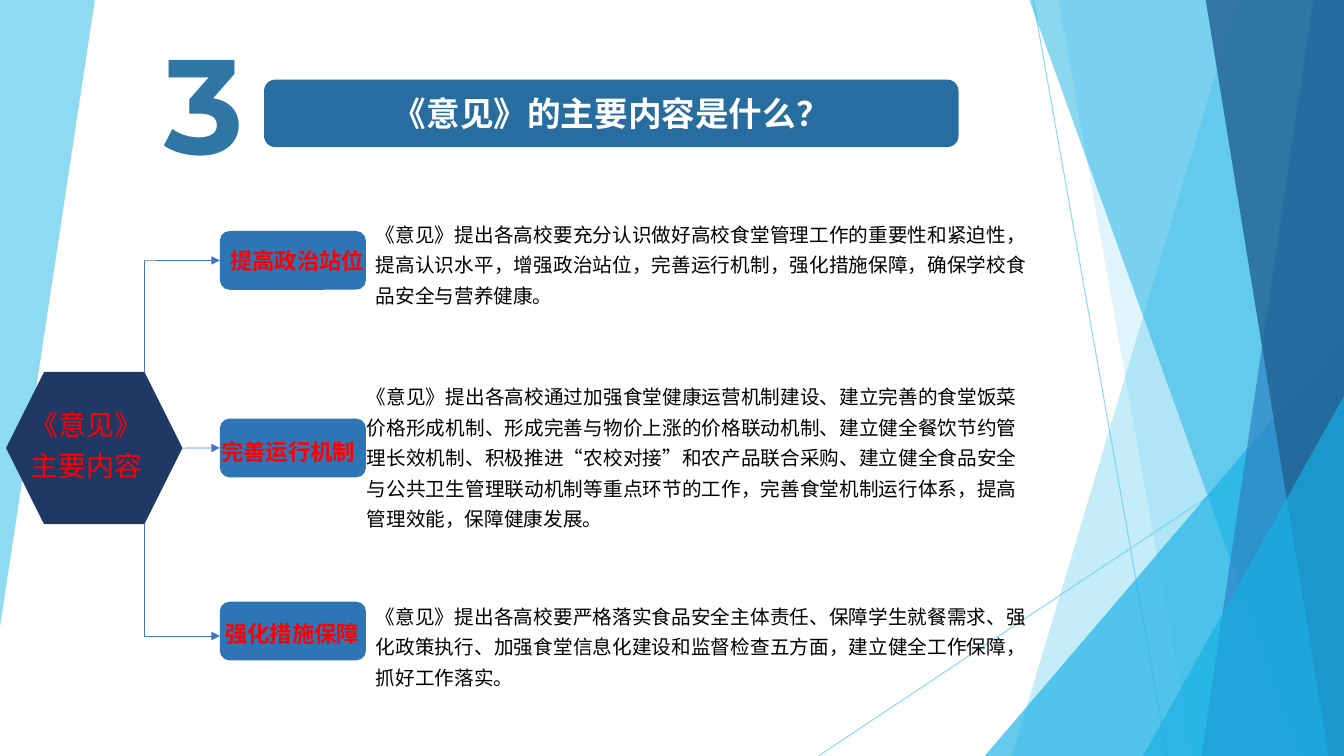
from dataclasses import dataclass

from lxml.etree import SubElement
from pptx import Presentation
from pptx.dml.color import RGBColor
from pptx.enum.shapes import MSO_CONNECTOR as Link, MSO_SHAPE as Shape
from pptx.enum.text import MSO_ANCHOR as Anchor, MSO_AUTO_SIZE as AutoSize, PP_ALIGN as Align
from pptx.oxml.ns import qn
from pptx.util import Pt


@dataclass(frozen=True)
class Theme:
    font: str = "Noto Sans CJK SC"
    number_font: str = "Montserrat"
    sky: str = "5FCBEF"
    cyan: str = "17B0E4"
    blue: str = "2E83C3"
    navy: str = "226292"
    banner: str = "286D9F"
    number: str = "3076A4"
    hub: str = "203864"
    card: str = "2E75B6"
    arrow: str = "4472C4"
    accent: str = "FF0000"
    white: str = "FFFFFF"
    black: str = "000000"
    number_size: int = 96
    title_size: int = 24
    hub_size: int = 20
    label_size: int = 16
    body_size: int = 14


@dataclass(frozen=True)
class Facet:
    """A translucent panel whose outline is given corner by corner."""
    corners: tuple
    color: str
    alpha: int


@dataclass(frozen=True)
class Wedge:
    """A right triangle standing in the lower right corner."""
    left: float
    top: float


@dataclass(frozen=True)
class Topic:
    label: str
    label_box: tuple
    label_spacing: float
    card_top: float
    arrow_y: float
    body: str
    body_box: tuple


THEME = Theme()
WIDTH, HEIGHT = 960, 540
CARD_LEFT, CARD_WIDTH, CARD_HEIGHT = 157, 104.4, 42
HUB = (4.3, 265.7, 126, 108.7)
TRUNK_X = 102.8


def right_facet(top_x: float, bottom_x: float, color: str, alpha: int) -> Facet:
    return Facet(((top_x, -0.6), (WIDTH, -0.6), (WIDTH, HEIGHT), (bottom_x, HEIGHT)), color, alpha)


LEFT_FACET = Facet(((0, -0.6), (67.7, -0.6), (67.7, 0.6), (0, 447.8)), THEME.sky, 70)
RAYS = (((738, 0), (833.8, HEIGHT)), ((WIDTH, 290.2), (584.6, HEIGHT)))
PANELS = (
    right_facet(884.2, 722.9, THEME.sky, 36),
    right_facet(756, 851.8, THEME.sky, 20),
    Wedge(703.4, 239.8),
    right_facet(735.1, 929.5, THEME.cyan, 50),
    right_facet(938.2, 858.2, THEME.blue, 70),
    right_facet(861.1, 949, THEME.navy, 80),
    Wedge(816.5, 283),
)

TOPICS = (
    Topic("提高政治站位", (156.2, 169.9, 112.3, 33.1), 1.0, 165, 186.2,
          "《意见》提出各高校要充分认识做好高校食堂管理工作的重要性和紧迫性，提高认识水平，"
          "增强政治站位，完善运行机制，强化措施保障，确保学校食品安全与营养健康。",
          (261.4, 150.5, 478.8, 71.3)),
    Topic("完善运行机制", (149.8, 303.8, 112.3, 33.1), 1.2, 299, 320.1,
          "《意见》提出各高校通过加强食堂健康运营机制建设、建立完善的食堂饭菜价格形成机制、"
          "形成完善与物价上涨的价格联动机制、建立健全餐饮节约管理长效机制、积极推进“农校对接”"
          "和农产品联合采购、建立健全食品安全与公共卫生管理联动机制等重点环节的工作，"
          "完善食堂机制运行体系，提高管理效能，保障健康发展。",
          (254.9, 266.4, 478.8, 115.2)),
    Topic("强化措施保障", (149.8, 434.2, 118.1, 33.1), 1.2, 429.8, 454.3,
          "《意见》提出各高校要严格落实食品安全主体责任、保障学生就餐需求、强化政策执行、"
          "加强食堂信息化建设和监督检查五方面，建立健全工作保障，抓好工作落实。",
          (261.4, 423.4, 478.8, 71.3)),
)


def points(values: tuple) -> list:
    return [Pt(value) for value in values]


def set_alpha(element, alpha: int) -> None:
    for color in element.iter(qn("a:srgbClr")):
        SubElement(color, qn("a:alpha"), val=str(alpha * 1000))


def paint(shape, color: str, alpha: int = 100) -> None:
    shape.shadow.inherit = False
    shape.fill.solid()
    shape.fill.fore_color.rgb = RGBColor.from_string(color)
    shape.line.fill.background()
    if alpha < 100:
        set_alpha(shape.element.spPr, alpha)


def add_block(page, kind, box: tuple, color: str, alpha: int = 100):
    shape = page.shapes.add_shape(kind, *points(box))
    paint(shape, color, alpha)
    return shape


def add_facet(page, facet: Facet) -> None:
    corners = [tuple(points(corner)) for corner in facet.corners]
    builder = page.shapes.build_freeform(*corners[0], scale=1.0)
    builder.add_line_segments(corners[1:], close=True)
    paint(builder.convert_to_shape(), facet.color, facet.alpha)


def add_wedge(page, wedge: Wedge) -> None:
    box = (wedge.left, wedge.top, WIDTH - wedge.left, HEIGHT - wedge.top)
    add_block(page, Shape.ISOSCELES_TRIANGLE, box, THEME.cyan, 66).adjustments[0] = 1


def add_line(page, start: tuple, end: tuple, color: str, width: float,
             alpha: int = 100, arrow: bool = False):
    line = page.shapes.add_connector(Link.STRAIGHT, *points(start + end))
    line.line.color.rgb = RGBColor.from_string(color)
    line.line.width = Pt(width)
    properties = line.element.spPr
    if alpha < 100:
        set_alpha(properties, alpha)
    if arrow:
        SubElement(properties.find(qn("a:ln")), qn("a:tailEnd"), type="triangle")
    SubElement(properties, qn("a:effectLst"))
    return line


def write(shape, text: str, *, size: int, color: str, font: str = THEME.font, bold: bool = False,
          align=Align.LEFT, spacing: float = 1.0, anchor=Anchor.TOP) -> None:
    frame = shape.text_frame
    frame.word_wrap = True
    frame.auto_size = AutoSize.NONE
    frame.vertical_anchor = anchor
    para = frame.paragraphs[0]
    para.alignment = align
    para.line_spacing = spacing
    span = para.add_run()
    span.text = text
    span.font.name = font
    span.font.size = Pt(size)
    span.font.bold = bold
    span.font.color.rgb = RGBColor.from_string(color)
    SubElement(para.runs[0]._r.get_or_add_rPr(), qn("a:ea"), typeface=font)


def add_text(page, text: str, box: tuple, **style) -> None:
    write(page.shapes.add_textbox(*points(box)), text, **style)


def add_backdrop(page) -> None:
    add_facet(page, LEFT_FACET)
    for start, end in RAYS:
        add_line(page, start, end, THEME.sky, 0.75, alpha=70)
    for panel in PANELS:
        if isinstance(panel, Wedge):
            add_wedge(page, panel)
        else:
            add_facet(page, panel)


def add_heading(page) -> None:
    box = (188.6, 56.9, 496.1, 48.2)
    banner = add_block(page, Shape.ROUNDED_RECTANGLE, box, THEME.banner)
    title = page.shapes.title
    title.left, title.top, title.width, title.height = points(box)
    title.element.addprevious(banner.element)
    write(title, "《意见》的主要内容是什么？", size=THEME.title_size, color=THEME.white,
          bold=True, align=Align.CENTER, anchor=Anchor.MIDDLE)
    add_text(page, "3", (110.2, 10.8, 77.8, 123.8), size=THEME.number_size,
             color=THEME.number, font=THEME.number_font, bold=True)


def add_topic(page, topic: Topic) -> None:
    card_box = (CARD_LEFT, topic.card_top, CARD_WIDTH, CARD_HEIGHT)
    card = add_block(page, Shape.ROUNDED_RECTANGLE, card_box, THEME.card)
    hub_left, hub_top, hub_width, hub_height = HUB
    beside_hub = hub_top < topic.arrow_y < hub_top + hub_height
    start_x = hub_left + hub_width if beside_hub else TRUNK_X
    if not beside_hub:
        trunk_y = hub_top if topic.arrow_y < hub_top else hub_top + hub_height
        add_line(page, (TRUNK_X, trunk_y), (TRUNK_X, topic.arrow_y), THEME.arrow, 0.5)
    arrow = add_line(page, (start_x, topic.arrow_y), (CARD_LEFT, topic.arrow_y),
                     THEME.arrow, 0.5, arrow=True)
    if abs(topic.arrow_y - topic.card_top - CARD_HEIGHT / 2) < 1:
        arrow.end_connect(card, 1)
    add_text(page, topic.label, topic.label_box, size=THEME.label_size, color=THEME.accent,
             bold=True, align=Align.CENTER, spacing=topic.label_spacing, anchor=Anchor.MIDDLE)
    add_text(page, topic.body, topic.body_box, size=THEME.body_size, color=THEME.black,
             align=Align.JUSTIFY, spacing=1.3)


def main() -> None:
    deck = Presentation()
    deck.slide_width, deck.slide_height = Pt(WIDTH), Pt(HEIGHT)
    page = deck.slides.add_slide(deck.slide_layouts.get_by_name("Title Only"))
    add_backdrop(page)
    add_heading(page)
    add_block(page, Shape.HEXAGON, HUB, THEME.hub)
    add_text(page, "《意见》主要内容", (14.4, 298.8, 105.1, 33.1), size=THEME.hub_size,
             color=THEME.accent, spacing=1.2, anchor=Anchor.MIDDLE)
    for topic in TOPICS:
        add_topic(page, topic)
    deck.save("out.pptx")


if __name__ == "__main__":
    main()
